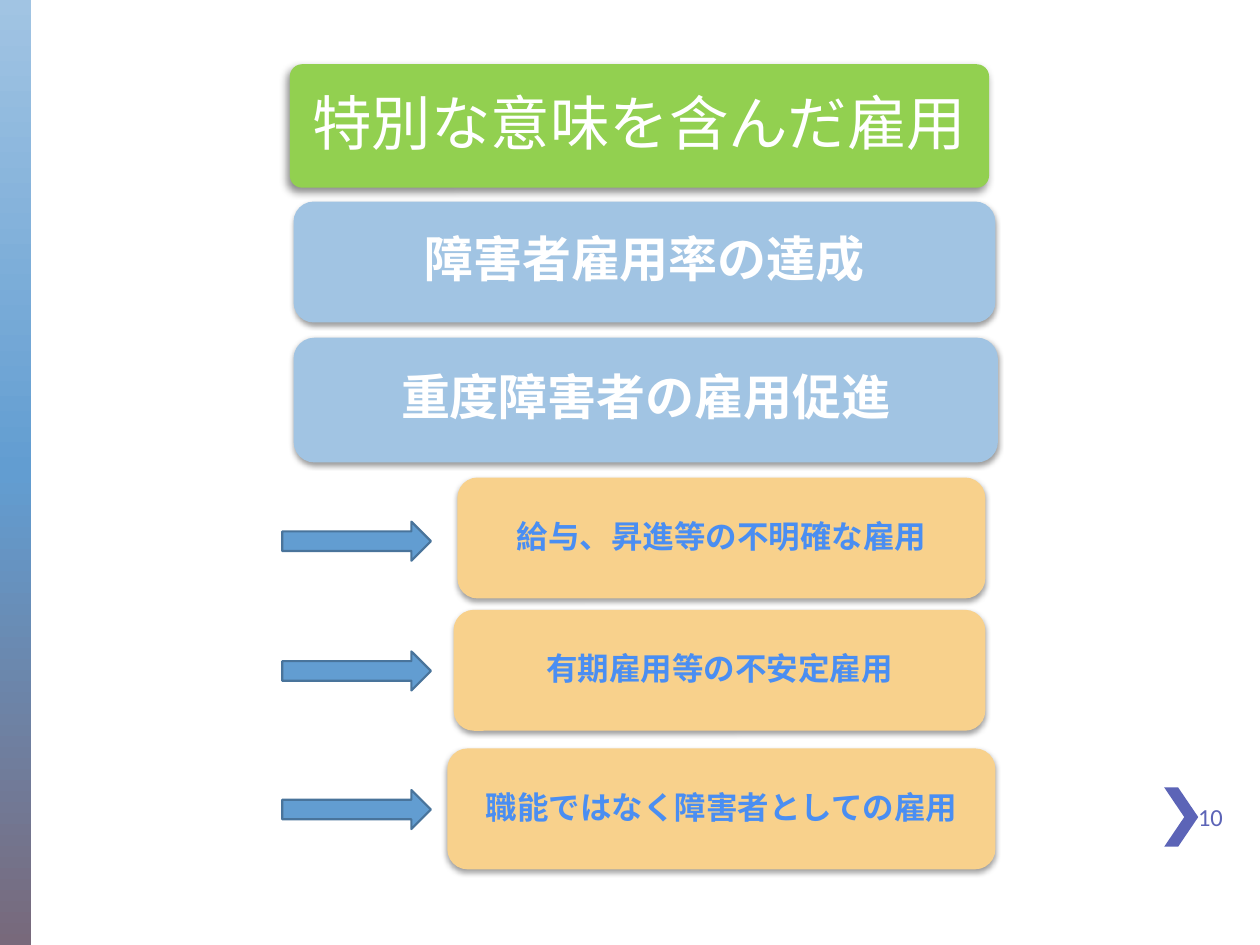
from dataclasses import dataclass

from lxml import etree
from pptx import Presentation
from pptx import util as u
from pptx.dml.color import RGBColor
from pptx.enum import shapes, text
from pptx.oxml import parse_xml
from pptx.oxml.ns import nsdecls, qn

COLORS = {
    "green": "92D050", "sky": "A1C4E3", "blue": "629DD1", "plum": "78697B",
    "sand": "F8D18C", "ink": "4A8EF2", "edge": "49749B", "indigo": "5C64B7",
    "white": "FFFFFF", "black": "000000",
}
COLS, ROWS = 100, 75  # grid over the whole slide
JP = "Noto Sans CJK JP"

prs = Presentation()
prs.slide_width, prs.slide_height = u.Inches(10), u.Inches(7.5)
s = prs.slides.add_slide(prs.slide_layouts[6])


@dataclass(frozen=True)
class Shadow:
    alpha: int
    blur: float
    dist: float
    angle: int


@dataclass(frozen=True)
class Style:
    fill: str
    color: str
    size: int
    bold: bool
    radius: float
    shadow: Shadow


@dataclass(frozen=True)
class Card:
    label: str
    col: float
    row: float
    width: float
    height: float
    style: Style


SOFT = Shadow(38, 3.1, 1.6, 90)
TITLE = Style("green", "white", 34, False, 0.1, Shadow(45, 5, 3, 135))
GOAL = Style("sky", "white", 28, True, 0.167, SOFT)
ISSUE = Style("sand", "ink", 18, True, 0.167, SOFT)

CARDS = [
    Card("特別な意味を含んだ雇用", 23, 5.1, 55.5, 9.8, TITLE),
    Card("障害者雇用率の達成", 23.3, 16, 55.7, 9.6, GOAL),
    Card("重度障害者の雇用促進", 23.3, 26.8, 55.9, 9.9, GOAL),
    Card("給与、昇進等の不明確な雇用", 36.3, 37.9, 41.9, 9.6, ISSUE),
    Card("有期雇用等の不安定雇用", 36, 48.4, 42.2, 9.6, ISSUE),
    Card("職能ではなく障害者としての雇用", 35.5, 59.4, 43.5, 9.6, ISSUE),
]
ARROW_ROWS = (41.4, 51.7, 62.7)


def rgb(name: str) -> RGBColor:
    return RGBColor.from_string(COLORS[name])


def box(col: float, row: float, width: float, height: float) -> list[int]:
    """Turn grid columns and rows into slide lengths."""
    dx, dy = prs.slide_width / COLS, prs.slide_height / ROWS
    return [round(v) for v in (col * dx, row * dy, width * dx, height * dy)]


def add_shape(kind, area: list[int], fill: str):
    sp = s.shapes.add_shape(kind, *area)
    sp.shadow.inherit = False
    sp.fill.solid()
    sp.fill.fore_color.rgb = rgb(fill)
    sp.line.fill.background()
    return sp


def add_shadow(sp, shadow: Shadow) -> None:
    effects = sp._element.spPr.find(qn("a:effectLst"))
    outer = etree.SubElement(
        effects, qn("a:outerShdw"), blurRad=str(u.Pt(shadow.blur)),
        dist=str(u.Pt(shadow.dist)), dir=str(shadow.angle * 60000),
        algn="ctr", rotWithShape="0")
    color = etree.SubElement(outer, qn("a:srgbClr"), val=COLORS["black"])
    etree.SubElement(color, qn("a:alpha"), val=str(shadow.alpha * 1000))


def write(sp, label: str, color: str, fonts: dict, frame: dict, para: dict) -> None:
    tf = sp.text_frame
    p = tf.paragraphs[0]
    r = p.add_run()
    r.text = label
    for target, values in ((tf, frame), (p, para), (r.font, fonts)):
        for key, value in values.items():
            setattr(target, key, value)
    r.font.color.rgb = rgb(color)
    etree.SubElement(r._r.get_or_add_rPr(), qn("a:ea"), typeface=fonts["name"])


def add_card(card: Card) -> None:
    st = card.style
    sp = add_shape(shapes.MSO_SHAPE.ROUNDED_RECTANGLE,
                   box(card.col, card.row, card.width, card.height), st.fill)
    sp.adjustments[0] = st.radius
    add_shadow(sp, st.shadow)
    write(sp, card.label, st.color,
          {"name": JP, "size": u.Pt(st.size), "bold": st.bold},
          {"word_wrap": True, "vertical_anchor": text.MSO_ANCHOR.MIDDLE},
          {"alignment": text.PP_ALIGN.CENTER, "line_spacing": 0.9})


def add_arrow(row: float) -> None:
    sp = add_shape(shapes.MSO_SHAPE.RIGHT_ARROW, box(22.4, row, 11.8, 3.1), "blue")
    sp.line.color.rgb = rgb("edge")
    sp.line.width = u.Pt(1.25)


def add_side_band() -> None:
    sp = add_shape(shapes.MSO_SHAPE.RECTANGLE, box(0, 0, 2.5, ROWS), "blue")
    stops = "".join(
        f'<a:gs pos="{pos * 1000}"><a:srgbClr val="{COLORS[name]}"/></a:gs>'
        for pos, name in ((0, "sky"), (50, "blue"), (100, "plum")))
    spPr = sp._element.spPr
    spPr.replace(spPr.find(qn("a:solidFill")), parse_xml(
        f'<a:gradFill {nsdecls("a")} rotWithShape="1"><a:gsLst>{stops}</a:gsLst>'
        '<a:lin ang="5400000" scaled="0"/></a:gradFill>'))


def add_page_number(number: int) -> None:
    # Chevron marker
    sp = add_shape(shapes.MSO_SHAPE.CHEVRON, box(92.4, 62.5, 2.7, 4.7), "indigo")
    sp.adjustments[0] = 0.59
    # Number beside it
    tb = s.shapes.add_textbox(*box(94.1, 62.8, 4.2, 4))
    write(tb, str(number), "indigo", {"name": "Calibri", "size": u.Pt(14)},
          {"word_wrap": False, "vertical_anchor": text.MSO_ANCHOR.MIDDLE},
          {"alignment": text.PP_ALIGN.LEFT})


def main() -> None:
    add_side_band()
    for card in CARDS:
        add_card(card)
    for row in ARROW_ROWS:
        add_arrow(row)
    add_page_number(10)
    prs.save("out.pptx")


if __name__ == "__main__":
    main()
